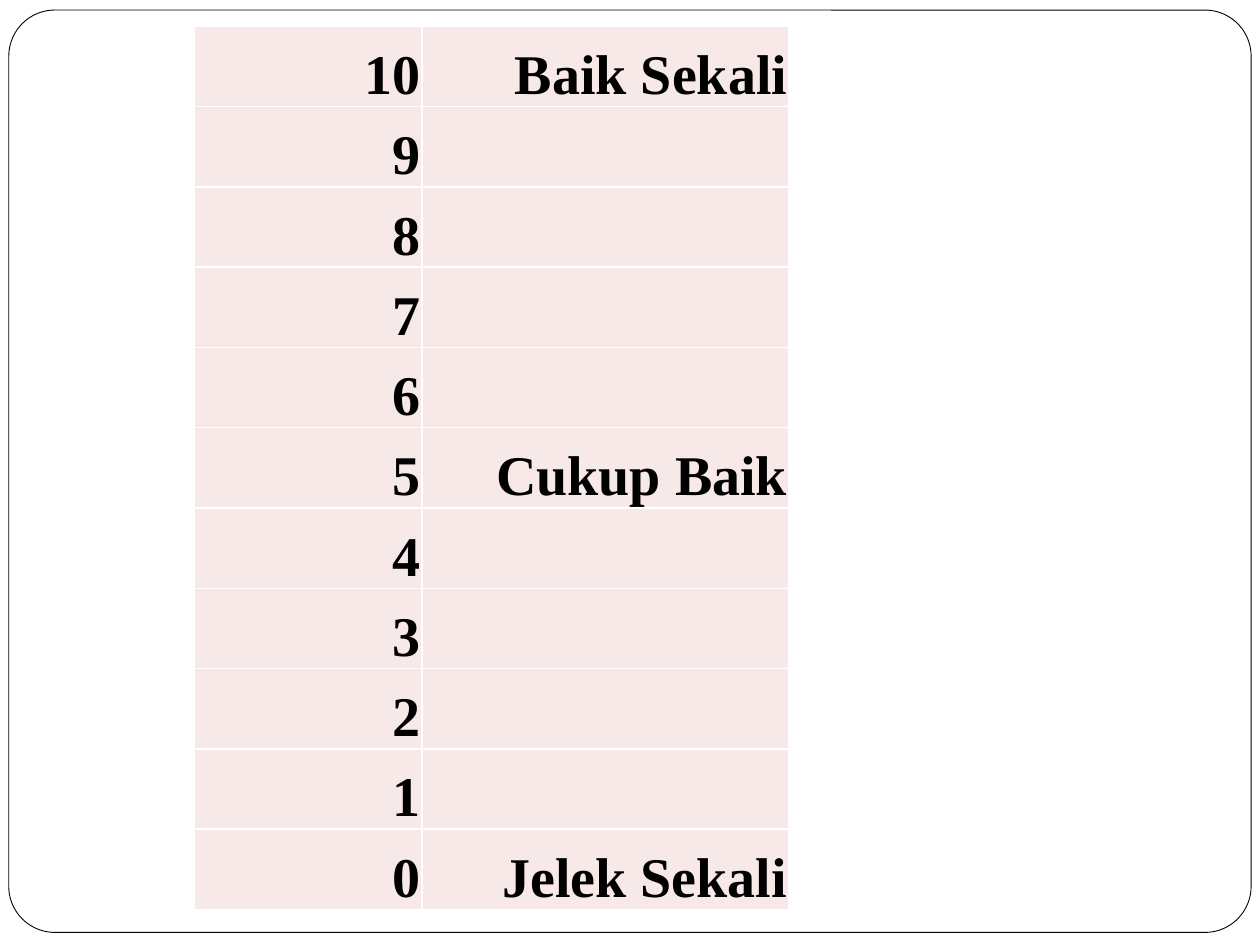
from dataclasses import dataclass

from lxml.etree import SubElement
from pptx import Presentation
from pptx.dml.color import RGBColor
from pptx.enum.shapes import MSO_SHAPE
from pptx.enum.text import MSO_ANCHOR, PP_ALIGN
from pptx.oxml.ns import qn
from pptx.util import Inches, Pt


@dataclass(frozen=True)
class Theme:
    font: str = "Times New Roman"
    text_size: int = 32
    frame_width: float = 0.5
    border_width: float = 1
    ink: str = "000000"
    paper: str = "FFFFFF"
    cell: str = "F7E9E8"


class SlideBuilder:
    """Draws themed elements on one slide."""

    def __init__(self, slide, theme):
        self.slide = slide
        self.theme = theme

    def add_frame(self, left, top, width, height, rounding):
        shape = self.slide.shapes.add_shape(
            MSO_SHAPE.ROUNDED_RECTANGLE,
            Inches(left), Inches(top), Inches(width), Inches(height),
        )
        shape.adjustments[0] = rounding
        shape.shadow.inherit = False
        shape.fill.solid()
        shape.fill.fore_color.rgb = RGBColor.from_string(self.theme.paper)
        shape.line.color.rgb = RGBColor.from_string(self.theme.ink)
        shape.line.width = Pt(self.theme.frame_width)

    def add_table(self, left, top, column_widths, height, rows):
        table = self.slide.shapes.add_table(
            len(rows), len(column_widths),
            Inches(left), Inches(top), Inches(sum(column_widths)), Inches(height),
        ).table
        table.first_row = table.horz_banding = False
        for column, width in zip(table.columns, column_widths):
            column.width = Inches(width)
        for row_index, row in enumerate(rows):
            for column_index, text in enumerate(row):
                self.fill_cell(table.cell(row_index, column_index), text)

    def fill_cell(self, cell, text):
        self.add_borders(cell)
        cell.fill.solid()
        cell.fill.fore_color.rgb = RGBColor.from_string(self.theme.cell)
        if not text:
            return
        cell.vertical_anchor = MSO_ANCHOR.BOTTOM
        cell.margin_left = cell.margin_right = cell.margin_top = Inches(0.01)
        cell.margin_bottom = 0
        paragraph = cell.text_frame.paragraphs[0]
        paragraph.alignment = PP_ALIGN.RIGHT
        run = paragraph.add_run()
        run.text = text
        run.font.name = self.theme.font
        run.font.size = Pt(self.theme.text_size)
        run.font.bold = True
        run.font.color.rgb = RGBColor.from_string(self.theme.ink)

    def add_borders(self, cell):
        properties = cell._tc.get_or_add_tcPr()
        for side in ("lnL", "lnR", "lnT", "lnB"):
            border = SubElement(
                properties, qn(f"a:{side}"), w=str(Pt(self.theme.border_width))
            )
            fill = SubElement(border, qn("a:solidFill"))
            SubElement(fill, qn("a:srgbClr"), val=self.theme.paper)


def main():
    presentation = Presentation()
    presentation.slide_width = Inches(10)
    presentation.slide_height = Inches(7.5)
    slide = presentation.slides.add_slide(presentation.slide_layouts[6])

    ratings = {10: "Baik Sekali", 5: "Cukup Baik", 0: "Jelek Sekali"}
    rows = [(str(score), ratings.get(score, "")) for score in range(10, -1, -1)]

    builder = SlideBuilder(slide, Theme())
    builder.add_frame(0.07, 0.08, 9.86, 7.32, rounding=0.05)
    builder.add_table(1.54, 0.21, (1.81, 2.91), 7.01, rows)
    presentation.save("out.pptx")


if __name__ == "__main__":
    main()
